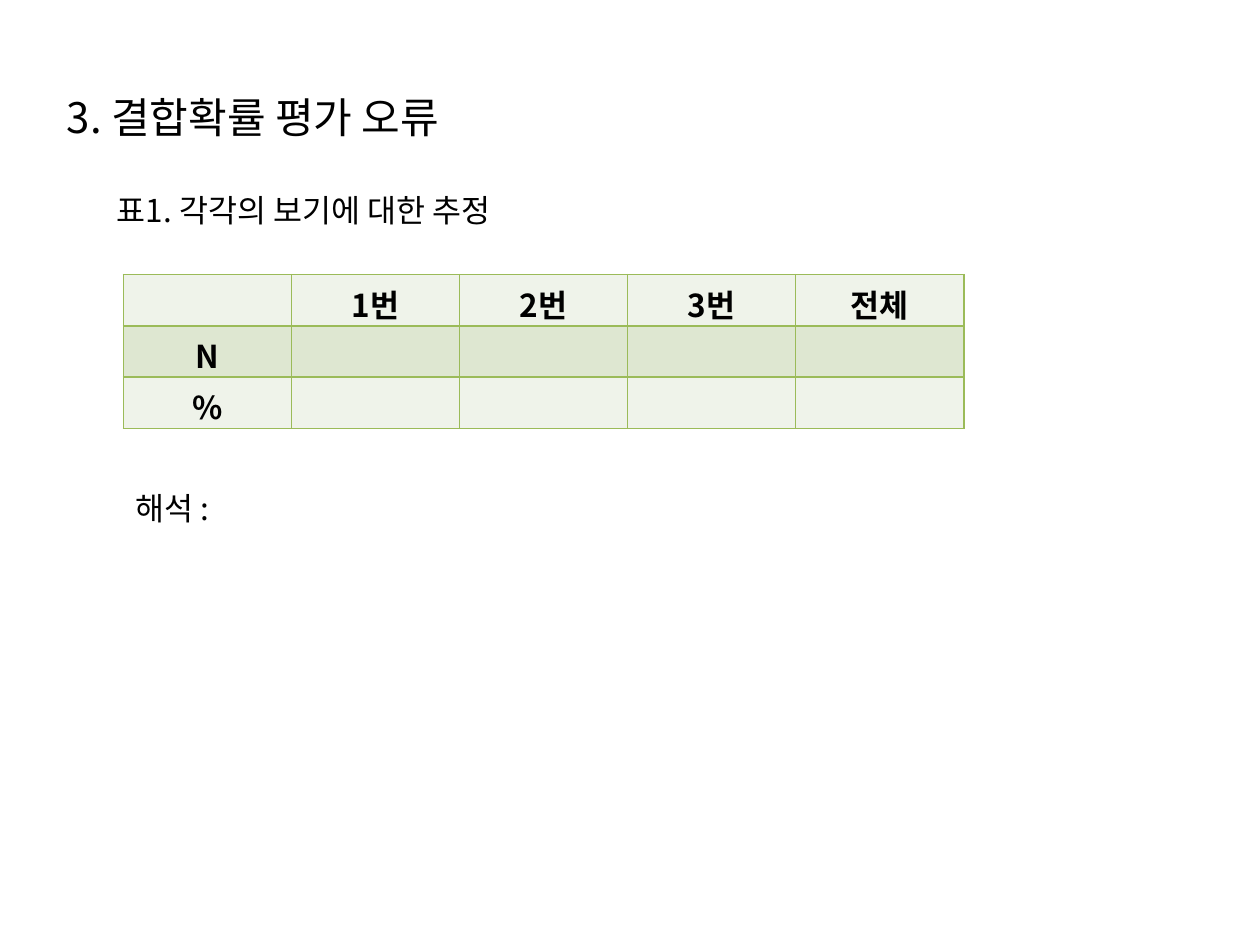
import pptx
import pptx.dml.color
import pptx.enum.text
import pptx.oxml
import pptx.util
from pptx.util import Inches

FONT = "Noto Sans CJK KR"
BLACK = pptx.dml.color.RGBColor(0x00, 0x00, 0x00)
GREEN = pptx.dml.color.RGBColor(0x9B, 0xBB, 0x59)
LIGHT = pptx.dml.color.RGBColor(0xEF, 0xF3, 0xEA)
BAND = pptx.dml.color.RGBColor(0xDE, 0xE7, 0xD1)
MIDDLE = pptx.enum.text.MSO_ANCHOR.MIDDLE
LEFT = pptx.enum.text.PP_ALIGN.LEFT
CENTER = pptx.enum.text.PP_ALIGN.CENTER
NS = 'xmlns:a="http://schemas.openxmlformats.org/drawingml/2006/main"'

ROWS = [
    ["", "1번", "2번", "3번", "전체"],
    ["N", "", "", "", ""],
    ["%", "", "", "", ""],
]


def write(tf, text, size, align=LEFT, bold=False):
    """Fill a text frame with one formatted paragraph."""
    tf.text = text
    p = tf.paragraphs[0]
    p.alignment = align
    font = p.font
    font.name = FONT
    font.size = pptx.util.Pt(size)
    font.bold = bold
    font.color.rgb = BLACK
    # Korean letters take the East Asian typeface of each run
    for r in p.runs:
        r.font.name = FONT
        r.font._element.append(
            pptx.oxml.parse_xml(f'<a:ea {NS} typeface="{FONT}"/>'))


def add_title(s, box, text):
    title = s.shapes.title
    title.left, title.top, title.width, title.height = box
    tf = title.text_frame
    tf.word_wrap = True
    tf.auto_size = pptx.enum.text.MSO_AUTO_SIZE.NONE
    tf.vertical_anchor = MIDDLE
    write(tf, text, 24)


def add_label(s, box, text):
    tf = s.shapes.add_textbox(*box).text_frame
    tf.word_wrap = True
    tf.vertical_anchor = MIDDLE
    write(tf, text, 18)


def add_borders(cell):
    """Draw a 1 pt line on all four sides, ahead of the fill."""
    props = cell._tc.get_or_add_tcPr()
    for i, side in enumerate(("lnL", "lnR", "lnT", "lnB")):
        props.insert(i, pptx.oxml.parse_xml(
            f'<a:{side} {NS} w="12700"><a:solidFill>'
            f'<a:srgbClr val="{GREEN}"/></a:solidFill></a:{side}>'))


def add_estimate_table(s, box, rows):
    left, top, width, height = box
    table = s.shapes.add_table(
        len(rows), len(rows[0]), left, top, width, height).table
    for i, row in enumerate(rows):
        for j, text in enumerate(row):
            cell = table.cell(i, j)
            cell.vertical_anchor = MIDDLE
            cell.margin_bottom = 0
            write(cell.text_frame, text, 18, CENTER, True)
            cell.fill.solid()
            cell.fill.fore_color.rgb = BAND if i % 2 else LIGHT
            add_borders(cell)


def main():
    prs = pptx.Presentation()
    prs.slide_width, prs.slide_height = Inches(10), Inches(7.5)
    s = prs.slides.add_slide(prs.slide_layouts[5])

    # Heading and table caption
    add_title(s, (Inches(0.43), Inches(0.68), Inches(6.54), Inches(0.5)),
              "3. 결합확률 평가 오류")
    add_label(s, (Inches(0.83), Inches(1.47), Inches(3.86), Inches(0.4)),
              "표1. 각각의 보기에 대한 추정")

    # Table of estimates
    add_estimate_table(
        s, (Inches(0.98), Inches(2.18), Inches(6.67), Inches(1.22)), ROWS)

    # Interpretation
    add_label(s, (Inches(0.98), Inches(3.83), Inches(3.46), Inches(0.4)),
              "해석 :")

    prs.save("out.pptx")


if __name__ == "__main__":
    main()
